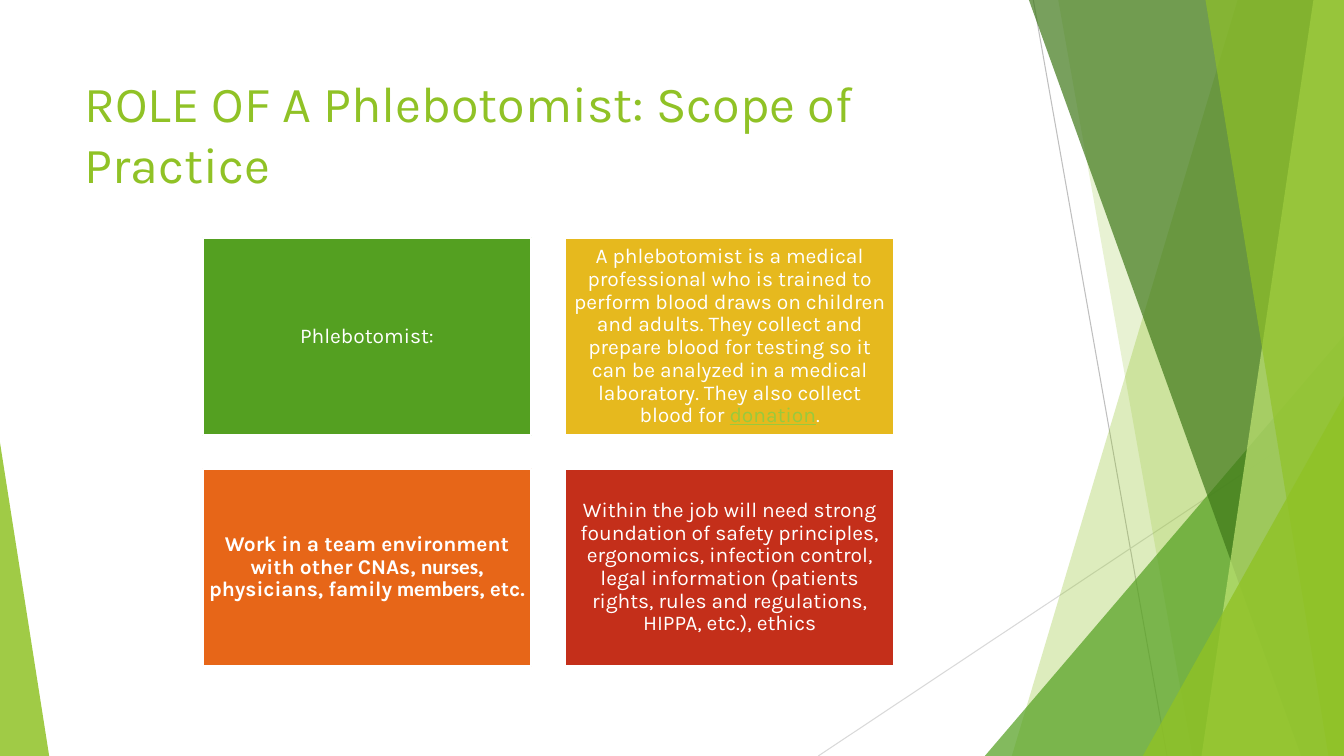
from lxml import etree
from pptx import Presentation
from pptx.dml.color import RGBColor
from pptx.enum.shapes import MSO_CONNECTOR, MSO_SHAPE
from pptx.enum.text import MSO_ANCHOR, PP_ALIGN
from pptx.oxml.ns import qn
from pptx.util import Cm, Pt

STRAIGHT = MSO_CONNECTOR.STRAIGHT
RECTANGLE = MSO_SHAPE.RECTANGLE
TRIANGLE = MSO_SHAPE.ISOSCELES_TRIANGLE
TOP, MIDDLE = MSO_ANCHOR.TOP, MSO_ANCHOR.MIDDLE
LEFT, CENTER = PP_ALIGN.LEFT, PP_ALIGN.CENTER

WHITE = RGBColor(0xFF, 0xFF, 0xFF)
LIME = RGBColor(0x90, 0xC2, 0x26)
GREEN = RGBColor(0x54, 0xA0, 0x21)
DARK_GREEN = RGBColor(0x3F, 0x78, 0x19)
PALE_LIME = RGBColor(0xC0, 0xE4, 0x74)
GOLD = RGBColor(0xE6, 0xB9, 0x1E)
ORANGE = RGBColor(0xE7, 0x66, 0x18)
RED = RGBColor(0xC4, 0x2F, 0x1A)
LINK_GREEN = RGBColor(0x99, 0xCA, 0x3C)
GREY = RGBColor(0xBF, 0xBF, 0xBF)
LIGHT_GREY = RGBColor(0xD9, 0xD9, 0xD9)

PAGE_WIDTH, PAGE_HEIGHT = 33.87, 19.05

# Each card is a fill and its spans: text with the format that differs.
CARDS = [
    (GREEN, [("Phlebotomist:", {})]),
    (GOLD, [
        ("A phlebotomist is a medical professional who is trained to perform "
         "blood draws on children and adults. They collect and prepare blood "
         "for testing so it can be analyzed in a medical laboratory. They also "
         "collect blood for ", {}),
        ("donation", {"color": LINK_GREEN, "underline": True}),
        (".", {}),
    ]),
    (ORANGE, [
        ("Work in a team environment with other CNAs, ", {"bold": True}),
        ("nurses", {"bold": True, "font": "Calibri"}),
        (", physicians, family", {"bold": True}),
        (" members", {"bold": True, "font": "Calibri"}),
        (", etc.", {"bold": True}),
    ]),
    (RED, [
        ("Within the job will need strong foundation of safety principles, "
         "ergonomics, infection control, legal information (patients rights, "
         "rules and regulations, HIPPA, etc.), ethics", {}),
    ]),
]


def add_span(para, text, font="Karla", size=15, color=WHITE, bold=False, underline=False):
    span = para.add_run()
    span.text = text
    span.font.name = font
    span.font.size = Pt(size)
    span.font.color.rgb = color
    span.font.bold = bold
    span.font.underline = underline


class SlidePainter:
    def __init__(self, page):
        self.shapes = page.shapes

    def paint(self, shape, color, opacity=100):
        """Fill a shape flat, without outline or shadow."""
        shape.shadow.inherit = False
        shape.fill.solid()
        shape.fill.fore_color.rgb = color
        shape.line.fill.background()
        if opacity < 100:
            tint = shape._element.spPr.find(qn("a:solidFill"))[0]
            etree.SubElement(tint, qn("a:alpha"), val=str(opacity * 1000))

    def line(self, start, end, color):
        points = [Cm(value) for value in (*start, *end)]
        connector = self.shapes.add_connector(STRAIGHT, *points)
        connector.line.color.rgb = color
        connector.line.width = Pt(0.75)
        etree.SubElement(connector._element.spPr, qn("a:effectLst"))

    def facet(self, top, bottom, color, opacity):
        """Draw a full-height band from a slanted left edge to the page's right edge."""
        builder = self.shapes.build_freeform(Cm(top), 0, scale=1.0)
        corners = [(PAGE_WIDTH, 0), (PAGE_WIDTH, PAGE_HEIGHT), (bottom, PAGE_HEIGHT)]
        builder.add_line_segments([(Cm(x), Cm(y)) for x, y in corners], close=True)
        self.paint(builder.convert_to_shape(), color, opacity)

    def corner_triangle(self, left, top, width, apex, color, opacity):
        """Draw a triangle that stands on the page's bottom edge."""
        shape = self.shapes.add_shape(
            TRIANGLE, Cm(left), Cm(top), Cm(width), Cm(PAGE_HEIGHT - top))
        shape.adjustments[0] = apex
        self.paint(shape, color, opacity)

    def set_text(self, box, spans, align, anchor, spacing=1.0):
        frame = box.text_frame
        frame.word_wrap = True
        frame.vertical_anchor = anchor
        para = frame.paragraphs[0]
        para.alignment = align
        para.line_spacing = spacing
        for text, style in spans:
            add_span(para, text, **style)
        return frame

    def title(self, text):
        box = self.shapes.add_textbox(Cm(1.88), Cm(1.7), Cm(23.88), Cm(3.66))
        self.set_text(box, [(text, {"size": 36, "color": LIME})], LEFT, TOP)

    def card(self, left, top, color, spans):
        box = self.shapes.add_shape(RECTANGLE, Cm(left), Cm(top), Cm(8.28), Cm(4.98))
        self.paint(box, color)
        box.line.color.rgb = WHITE
        box.line.width = Pt(1.5)
        frame = self.set_text(box, spans, CENTER, MIDDLE, spacing=0.9)
        frame.margin_left = frame.margin_right = Cm(0.15)
        frame.margin_top = frame.margin_bottom = Cm(0.15)


def main():
    deck = Presentation()
    deck.slide_width, deck.slide_height = Cm(PAGE_WIDTH), Cm(PAGE_HEIGHT)
    painter = SlidePainter(deck.slides.add_slide(deck.slide_layouts[6]))

    painter.line((26.04, 0), (29.41, PAGE_HEIGHT), GREY)
    painter.line((PAGE_WIDTH, 10.24), (20.62, PAGE_HEIGHT), LIGHT_GREY)
    painter.facet(31.19, 25.5, LIME, 30)
    painter.facet(26.67, 30.05, LIME, 20)
    painter.corner_triangle(24.82, 8.46, 9.05, 1, GREEN, 72)
    painter.facet(25.93, 32.79, DARK_GREEN, 70)
    painter.facet(33.1, 30.28, PALE_LIME, 70)
    painter.facet(30.38, 33.48, LIME, 65)
    painter.corner_triangle(28.8, 9.98, 5.07, 1, LIME, 80)
    painter.corner_triangle(0, 11.15, 1.24, 0, LIME, 85)

    painter.title("ROLE OF A Phlebotomist: Scope of Practice")
    for index, (color, spans) in enumerate(CARDS):
        row, column = divmod(index, 2)
        painter.card(5.11 + column * 9.14, 5.99 + row * 5.82, color, spans)

    deck.save("out.pptx")


if __name__ == "__main__":
    main()
